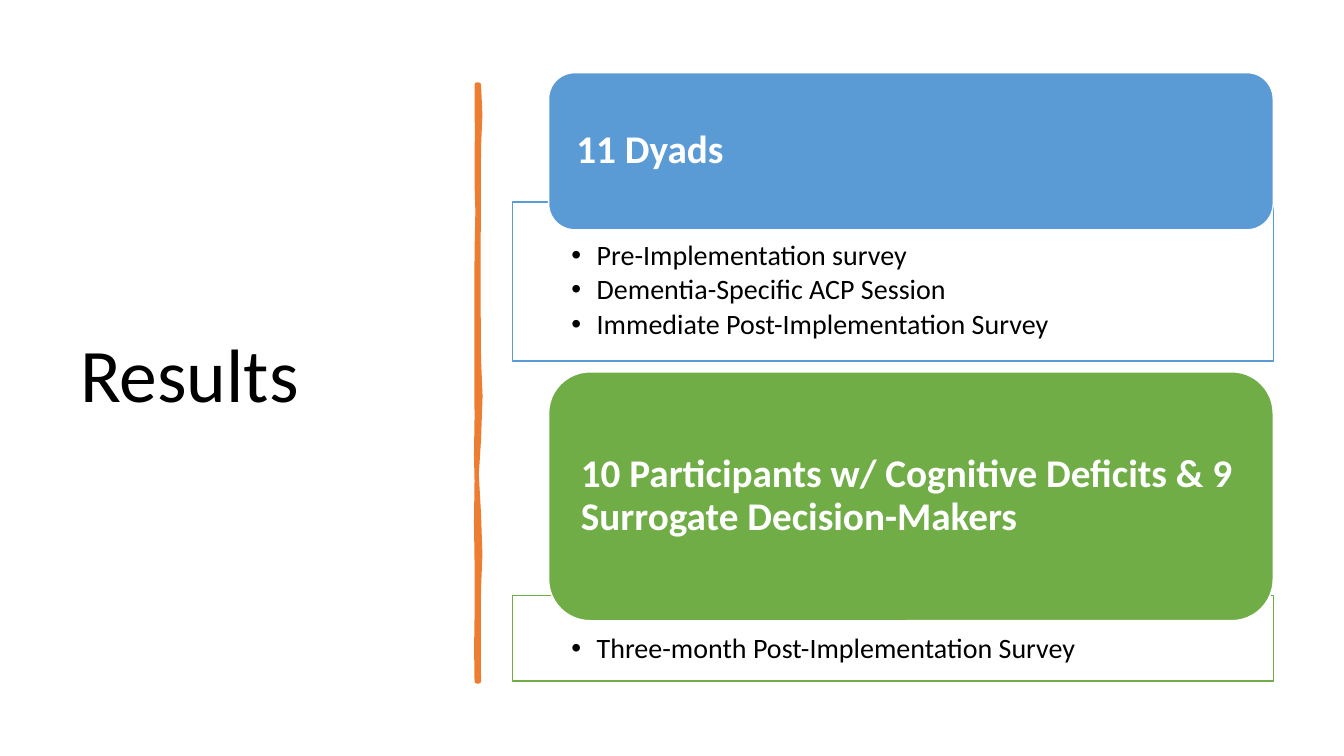
from dataclasses import dataclass

from lxml.etree import SubElement
from pptx import Presentation
from pptx.dml.color import RGBColor
from pptx.enum.shapes import MSO_SHAPE as Shape
from pptx.enum.text import MSO_ANCHOR as Anchor, PP_ALIGN as Align
from pptx.oxml.ns import qn
from pptx.util import Pt


@dataclass(frozen=True)
class Theme:
    """Colours, font and type sizes of the slide."""
    font: str = "Calibri"
    ink: str = "000000"
    paper: str = "FFFFFF"
    accent: str = "ED7D31"
    blue: str = "5B9BD5"
    green: str = "70AD47"
    title: int = 54
    heading: int = 28
    body: int = 20


STROKE_OUTLINE = [
    (342, 60.5), (343, 82), (342, 105.1), (341.8, 162.7), (341.7, 211.7),
    (342, 256.3), (343.1, 283), (342, 313.9), (340.4, 339), (342, 367.2),
    (343, 396), (342, 420.5), (341.8, 450), (342, 486.7),
    (340.6, 486.7), (340.3, 463), (340.6, 441.4), (340.6, 401), (340.2, 373),
    (340.6, 343.4), (340.2, 325), (340.6, 298.8), (340.4, 241.2),
    (340.6, 180), (341.2, 151), (340.6, 130.3), (340.8, 94), (340.6, 60.5),
]


def write_text(frame, lines, font, size, color, bold=False, anchor=Anchor.TOP,
               insets=(7.2, 3.6, 7.2, 3.6), after=0, bullet=None, indent=18):
    """Fill a text frame with one paragraph per line."""
    frame.word_wrap = True
    frame.vertical_anchor = anchor
    frame.margin_left, frame.margin_top, frame.margin_right, frame.margin_bottom = map(Pt, insets)
    for index, line in enumerate(lines):
        paragraph = frame.add_paragraph() if index else frame.paragraphs[0]
        paragraph.alignment = Align.LEFT
        paragraph.line_spacing = 0.9
        paragraph.space_after = Pt(after)
        run = paragraph.add_run()
        run.text = line
        run.font.name = font
        run.font.size = Pt(size)
        run.font.bold = bold
        run.font.color.rgb = RGBColor.from_string(color)
        if bullet:
            properties = paragraph._p.get_or_add_pPr()
            properties.set("marL", str(Pt(indent)))
            properties.set("indent", str(-Pt(indent)))
            SubElement(properties, qn("a:buFont"), typeface="Arial")
            SubElement(properties, qn("a:buChar"), char=bullet)


class SlideBuilder:
    """Draws the parts of one slide in a given theme."""

    def __init__(self, slide, theme):
        """Keep the slide and its theme."""
        self.slide = slide
        self.theme = theme

    def paint(self, shape, fill, line, width):
        """Set the fill and line of a shape and drop its shadow."""
        shape.shadow.inherit = False
        shape.fill.solid()
        shape.fill.fore_color.rgb = RGBColor.from_string(fill)
        shape.line.color.rgb = RGBColor.from_string(line)
        shape.line.width = Pt(width)

    def title(self, text, box):
        """Add the slide title."""
        frame = self.slide.shapes.add_textbox(*map(Pt, box)).text_frame
        write_text(frame, [text], self.theme.font, self.theme.title, self.theme.ink,
                   anchor=Anchor.MIDDLE)

    def brush_stroke(self, outline):
        """Add the hand-drawn divider."""
        first, *rest = [(Pt(x), Pt(y)) for x, y in outline]
        stroke = self.slide.shapes.build_freeform(*first)
        stroke.add_line_segments(rest, close=True)
        self.paint(stroke.convert_to_shape(), self.theme.accent, self.theme.accent, 3.25)

    def detail_panel(self, items, color, box):
        """Add an outlined panel with a bulleted list."""
        panel = self.slide.shapes.add_shape(Shape.RECTANGLE, *map(Pt, box))
        self.paint(panel, self.theme.paper, color, 1)
        paper = panel._element.spPr.find(qn("a:solidFill"))[0]
        SubElement(paper, qn("a:alpha"), val="90000")
        write_text(panel.text_frame, items, self.theme.font, self.theme.body, self.theme.ink,
                   insets=(42.2, 28.1, 42.2, 11.5), after=3, bullet="•")

    def heading(self, text, color, box):
        """Add a rounded heading block."""
        block = self.slide.shapes.add_shape(Shape.ROUNDED_RECTANGLE, *map(Pt, box))
        self.paint(block, color, self.theme.paper, 1)
        write_text(block.text_frame, [text], self.theme.font, self.theme.heading,
                   self.theme.paper, bold=True, anchor=Anchor.MIDDLE, insets=(14.4, 0, 14.4, 0))

    def result_group(self, heading, items, color, heading_span, panel_span):
        """Add a heading block overlapping its detail panel."""
        panel_left, heading_left, right = 366, 391.9, 909.5
        panel_top, panel_height = panel_span
        heading_top, heading_height = heading_span
        self.detail_panel(items, color,
                          (panel_left, panel_top, right - panel_left, panel_height))
        self.heading(heading, color,
                     (heading_left, heading_top, right - heading_left, heading_height))


def main():
    """Build and save the slide."""
    deck = Presentation()
    deck.slide_width, deck.slide_height = Pt(960), Pt(540)
    theme = Theme()
    results = SlideBuilder(deck.slides.add_slide(deck.slide_layouts[6]), theme)
    results.title("Results", (50.2, 50, 269.3, 440))
    results.brush_stroke(STROKE_OUTLINE)
    results.result_group(
        "11 Dyads",
        ["Pre-Implementation survey", "Dementia-Specific ACP Session",
         "Immediate Post-Implementation Survey"],
        theme.blue, heading_span=(51.9, 112.3), panel_span=(144.2, 113.8))
    results.result_group(
        "10 Participants w/ Cognitive Deficits & 9 Surrogate Decision-Makers",
        ["Three-month Post-Implementation Survey"],
        theme.green, heading_span=(265.6, 177.8), panel_span=(425.2, 61.2))
    deck.save("out.pptx")


if __name__ == "__main__":
    main()
